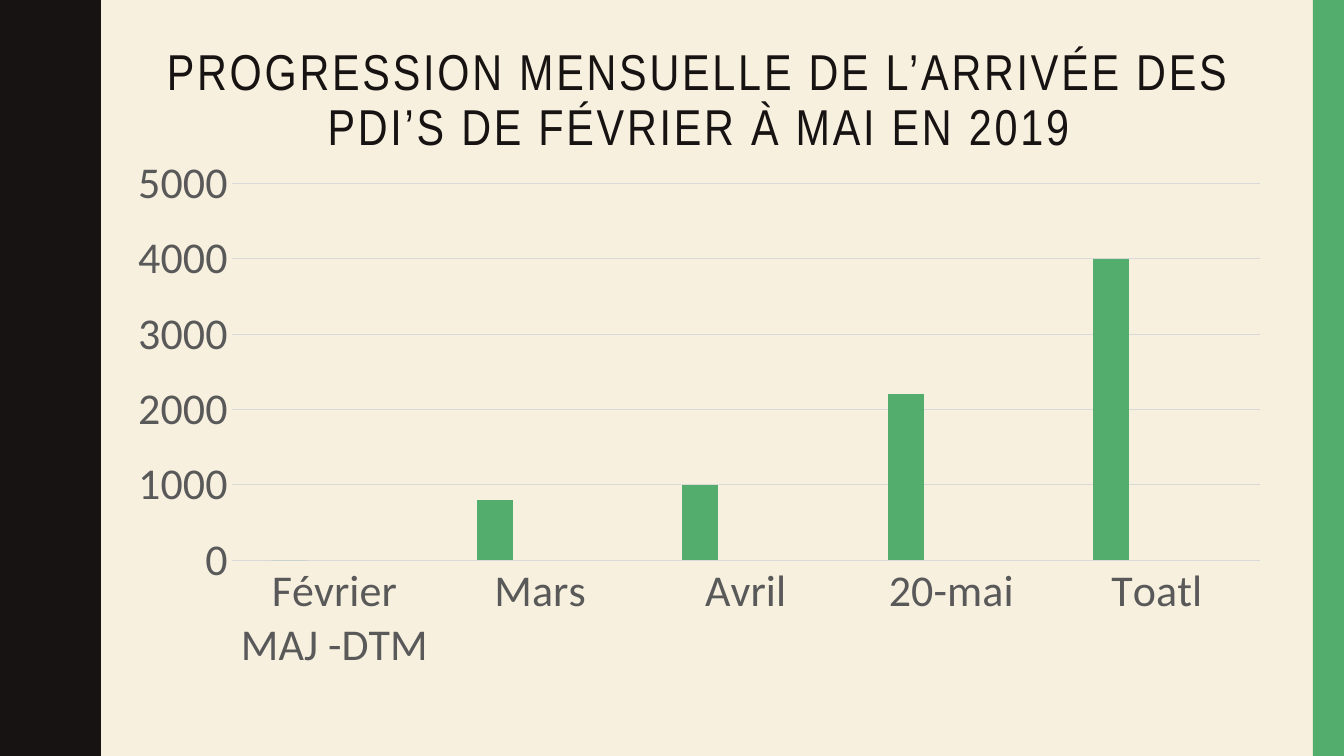
from lxml import etree
from pptx import Presentation
from pptx.chart.data import CategoryChartData
from pptx.dml.color import RGBColor
from pptx.enum.chart import XL_CHART_TYPE as ChartType, XL_TICK_MARK as TickMark
from pptx.enum.shapes import MSO_SHAPE as Preset
from pptx.enum.text import MSO_ANCHOR as Anchor, MSO_AUTO_SIZE as AutoSize, PP_ALIGN as Align
from pptx.oxml import parse_xml
from pptx.oxml.ns import nsdecls, qn
from pptx.util import Inches, Pt

COLORS = {
    "paper": "F7F0DF", "ink": "171312", "green": "53AE6E", "teal": "326267",
    "lime": "C5C34A", "label": "595959", "grid": "D9D9D9",
}
WIDTH, HEIGHT = 13.33, 7.5

# Wavy edge: one half wave as (x, y) in inches, mirrored for the way back
HALF_WAVE = [
    (0.78, 0), (0.78, 0.07), (0.79, 0.14), (0.8, 0.2), (0.81, 0.25),
    (0.83, 0.29), (0.85, 0.33), (0.87, 0.38), (0.89, 0.42), (0.91, 0.46),
    (0.93, 0.5), (0.95, 0.55), (0.96, 0.61), (0.97, 0.68), (0.97, 0.75),
]
WAVE_LENGTH, WAVE_COUNT = 1.5, 5

TITLE = "PROGRESSION MENSUELLE DE L’ARRIVÉE DES PDI’S DE FÉVRIER À MAI EN 2019"
MONTHS = ["Février MAJ -DTM", "Mars", "Avril", "20-mai", "Toatl"]
SERIES = [
    ("Series 1", [0, 800, 1000, 2200, 4000], "green"),
    ("Series 2", [None] * 5, "teal"),
    ("Series 3", [None] * 5, "lime"),
]
PLOT_AREA = {"x": 0.065, "y": 0.027, "w": 0.935, "h": 0.66}


def rgb(name):
    return RGBColor.from_string(COLORS[name])


class SlideBuilder:
    """Holds the slide and its style; boxes are shares of the slide's size."""

    title_font, chart_font = "Arial Narrow", "Calibri"
    title_size, chart_size = Pt(36), Pt(32)

    def __init__(self, presentation):
        self.slide = presentation.slides.add_slide(presentation.slide_layouts[5])
        self.size = presentation.slide_width, presentation.slide_height
        background = self.slide.background.fill
        background.solid()
        background.fore_color.rgb = rgb("paper")

    def box(self, *shares):
        return [round(share * self.size[i % 2]) for i, share in enumerate(shares)]

    def paint(self, shape, color):
        shape.shadow.inherit = False
        shape.fill.solid()
        shape.fill.fore_color.rgb = rgb(color)
        shape.line.fill.background()

    def bar(self, shares, color):
        self.paint(self.slide.shapes.add_shape(Preset.RECTANGLE, *self.box(*shares)), color)

    def wavy_band(self, color):
        wave = HALF_WAVE + [(x, WAVE_LENGTH - y) for x, y in HALF_WAVE[-2::-1]]
        edge = [(x, y + i * WAVE_LENGTH) for i in range(WAVE_COUNT) for x, y in wave]
        builder = self.slide.shapes.build_freeform(0, 0, scale=Inches(1))
        builder.add_line_segments(edge + [(0, HEIGHT)], close=True)
        self.paint(builder.convert_to_shape(), color)

    def title(self, text, shares):
        shape = self.slide.shapes.title
        shape.left, shape.top, shape.width, shape.height = self.box(*shares)
        frame = shape.text_frame
        frame.word_wrap = True
        frame.auto_size = AutoSize.NONE
        frame.vertical_anchor = Anchor.TOP
        paragraph = frame.paragraphs[0]
        paragraph.alignment = Align.CENTER
        paragraph.line_spacing = 0.9
        run = paragraph.add_run()
        run.text = text
        run.font.name, run.font.size = self.title_font, self.title_size
        run.font.color.rgb = rgb("ink")
        run.font._element.set("spc", "200")

    def axis(self, axis):
        axis.major_tick_mark = axis.minor_tick_mark = TickMark.NONE
        font = axis.tick_labels.font
        font.name, font.size = self.chart_font, self.chart_size
        font.color.rgb = rgb("label")

    def grid_line(self, line):
        line.color.rgb = rgb("grid")
        line.width = Pt(0.75)

    def column_chart(self, categories, series_list, shares, plot_area):
        data = CategoryChartData()
        data.categories = categories
        for name, values, _ in series_list:
            data.add_series(name, values)
        chart = self.slide.shapes.add_chart(
            ChartType.COLUMN_CLUSTERED, *self.box(*shares), data).chart
        chart.has_title = chart.has_legend = False
        chart.font.name, chart.font.size = self.chart_font, self.chart_size

        # Columns
        plot = chart.plots[0]
        plot.gap_width, plot.overlap = 219, -27
        plot.vary_by_categories = False
        for series, (_, _, color) in zip(plot.series, series_list):
            series.format.fill.solid()
            series.format.fill.fore_color.rgb = rgb(color)

        # Axes
        self.axis(chart.category_axis)
        self.grid_line(chart.category_axis.format.line)
        values = chart.value_axis
        self.axis(values)
        values.minimum_scale, values.maximum_scale, values.major_unit = 0, 5000, 1000
        values.format.line.fill.background()
        values.has_major_gridlines = True
        self.grid_line(values.major_gridlines.format.line)

        # Fixed inner plot area
        area = chart._chartSpace.chart.plotArea
        for old_layout in area.findall(qn("c:layout")):
            area.remove(old_layout)
        layout = parse_xml(f"<c:layout {nsdecls('c')}><c:manualLayout/></c:layout>")
        settings = {"layoutTarget": "inner", "xMode": "edge", "yMode": "edge", **plot_area}
        for tag, value in settings.items():
            etree.SubElement(layout[0], qn(f"c:{tag}")).set("val", str(value))
        area.insert(0, layout)


def main():
    presentation = Presentation()
    presentation.slide_width, presentation.slide_height = Inches(WIDTH), Inches(HEIGHT)
    builder = SlideBuilder(presentation)

    # Side decoration
    builder.wavy_band("ink")
    builder.bar((13.02 / WIDTH, 0, 0.31 / WIDTH, 1), "green")

    # Chart and title share the same column
    left, width = 1.37 / WIDTH, 11.13 / WIDTH
    builder.column_chart(MONTHS, SERIES, (left, 1.55 / HEIGHT, width, 5.78 / HEIGHT), PLOT_AREA)
    builder.title(TITLE, (left, 0.42 / HEIGHT, width, 1.63 / HEIGHT))

    presentation.save("out.pptx")


if __name__ == "__main__":
    main()
